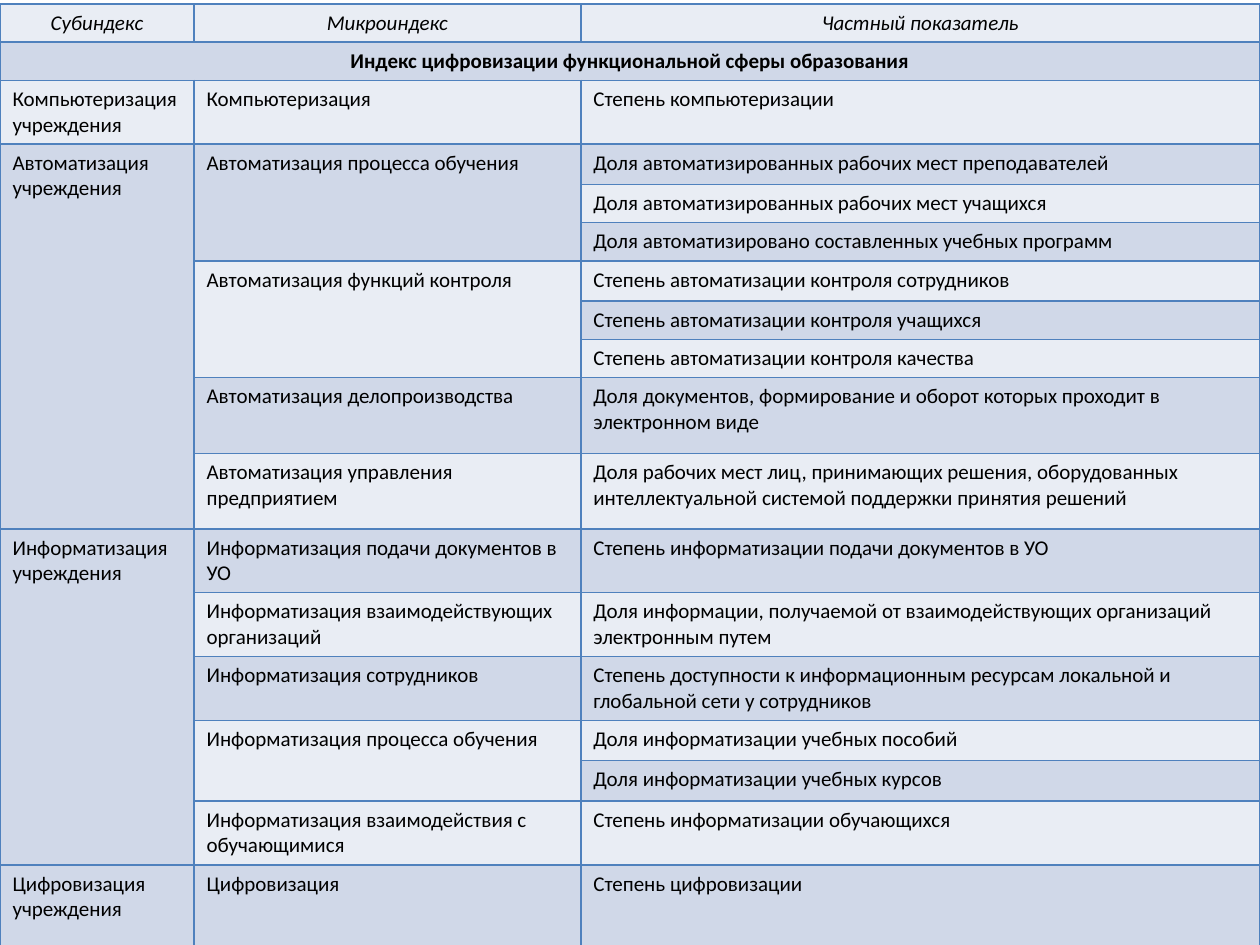
from typing import NamedTuple

from lxml.etree import SubElement
from pptx import Presentation
from pptx.dml.color import RGBColor as Rgb
from pptx.enum.text import PP_ALIGN as Align
from pptx.oxml.ns import qn
from pptx.table import Table, _Cell as Cell
from pptx.util import Inches, Pt

COLORS = {"light": "E9EDF4", "dark": "D0D8E8", "line": "4F81BD", "text": "000000"}
FONT, SIZE = "Calibri", 12
WIDTHS = [1.54, 3.07, 5.39]
HEIGHTS = [0.26, 0.26, 0.43, 0.32, 0.25, 0.27, 0.32, 0.28, 0.29,
           0.6, 0.6, *[0.32] * 6, 0.64]


class Micro(NamedTuple):
    name: str
    items: list[str]


class Sub(NamedTuple):
    name: str
    micros: list[Micro]


HEADS = ["Субиндекс", "Микроиндекс", "Частный показатель"]
TITLE = "Индекс цифровизации функциональной сферы образования"
SUBS = [
    Sub("Компьютеризация учреждения", [
        Micro("Компьютеризация", ["Степень компьютеризации"]),
    ]),
    Sub("Автоматизация учреждения", [
        Micro("Автоматизация процесса обучения", [
            "Доля автоматизированных рабочих мест преподавателей",
            "Доля автоматизированных рабочих мест учащихся",
            "Доля автоматизировано составленных учебных программ",
        ]),
        Micro("Автоматизация функций контроля", [
            "Степень автоматизации контроля сотрудников",
            "Степень автоматизации контроля учащихся",
            "Степень автоматизации контроля качества",
        ]),
        Micro("Автоматизация делопроизводства", [
            "Доля документов, формирование и оборот которых проходит в "
            "электронном виде",
        ]),
        Micro("Автоматизация управления предприятием", [
            "Доля рабочих мест лиц, принимающих решения, оборудованных "
            "интеллектуальной системой поддержки принятия решений",
        ]),
    ]),
    Sub("Информатизация учреждения", [
        Micro("Информатизация подачи документов в УО", [
            "Степень информатизации подачи документов в УО",
        ]),
        Micro("Информатизация взаимодействующих организаций", [
            "Доля информации, получаемой от взаимодействующих организаций "
            "электронным путем",
        ]),
        Micro("Информатизация сотрудников", [
            "Степень доступности к информационным ресурсам локальной и "
            "глобальной сети у сотрудников",
        ]),
        Micro("Информатизация процесса обучения", [
            "Доля информатизации учебных пособий",
            "Доля информатизации учебных курсов",
        ]),
        Micro("Информатизация взаимодействия с обучающимися", [
            "Степень информатизации обучающихся",
        ]),
    ]),
    Sub("Цифровизация учреждения", [
        Micro("Цифровизация", ["Степень цифровизации"]),
    ]),
]


def style(cell: Cell, shade: str) -> None:
    """Give a cell its four borders, then its fill."""
    props = cell._tc.get_or_add_tcPr()
    for side in ("lnL", "lnR", "lnT", "lnB"):
        line = SubElement(props, qn(f"a:{side}"), w=str(Pt(1)))
        solid = SubElement(line, qn("a:solidFill"))
        SubElement(solid, qn("a:srgbClr"), val=COLORS["line"])
    cell.fill.solid()
    cell.fill.fore_color.rgb = Rgb.from_string(COLORS[shade])


def write(table: Table, row: int, col: int, text: str, rows: int = 1, cols: int = 1,
          bold: bool = False, italic: bool = False, align: Align = Align.LEFT) -> None:
    """Write a cell, merged over the given rows and columns."""
    cell = table.cell(row, col)
    if rows * cols > 1:
        cell.merge(table.cell(row + rows - 1, col + cols - 1))
    cell.text = text
    para = cell.text_frame.paragraphs[0]
    para.alignment = align
    font = para.font
    font.name, font.size = FONT, Pt(SIZE)
    font.bold, font.italic = bold, italic
    font.color.rgb = Rgb.from_string(COLORS["text"])


def main() -> None:
    deck = Presentation()
    deck.slide_width, deck.slide_height = Inches(10), Inches(7.5)
    slide = deck.slides.add_slide(deck.slide_layouts[6])

    # Table grid
    table = slide.shapes.add_table(
        len(HEIGHTS), len(WIDTHS), Inches(0), Inches(0.03),
        Inches(sum(WIDTHS)), Inches(sum(HEIGHTS))).table
    table.first_row = table.horz_banding = False
    for column, width in zip(table.columns, WIDTHS):
        column.width = Inches(width)
    for num, (line, height) in enumerate(zip(table.rows, HEIGHTS)):
        line.height = Inches(height)
        for cell in line.cells:
            style(cell, "dark" if num % 2 else "light")

    # Heading rows
    for col, head in enumerate(HEADS):
        write(table, 0, col, head, italic=True, align=Align.CENTER)
    write(table, 1, 0, TITLE, cols=len(HEADS), bold=True, align=Align.CENTER)

    # Index tree: each name spans the rows of its indicators
    row = 2
    for sub in SUBS:
        write(table, row, 0, sub.name, rows=sum(len(m.items) for m in sub.micros))
        for micro in sub.micros:
            write(table, row, 1, micro.name, rows=len(micro.items))
            for item in micro.items:
                write(table, row, 2, item)
                row += 1

    deck.save("out.pptx")


if __name__ == "__main__":
    main()
